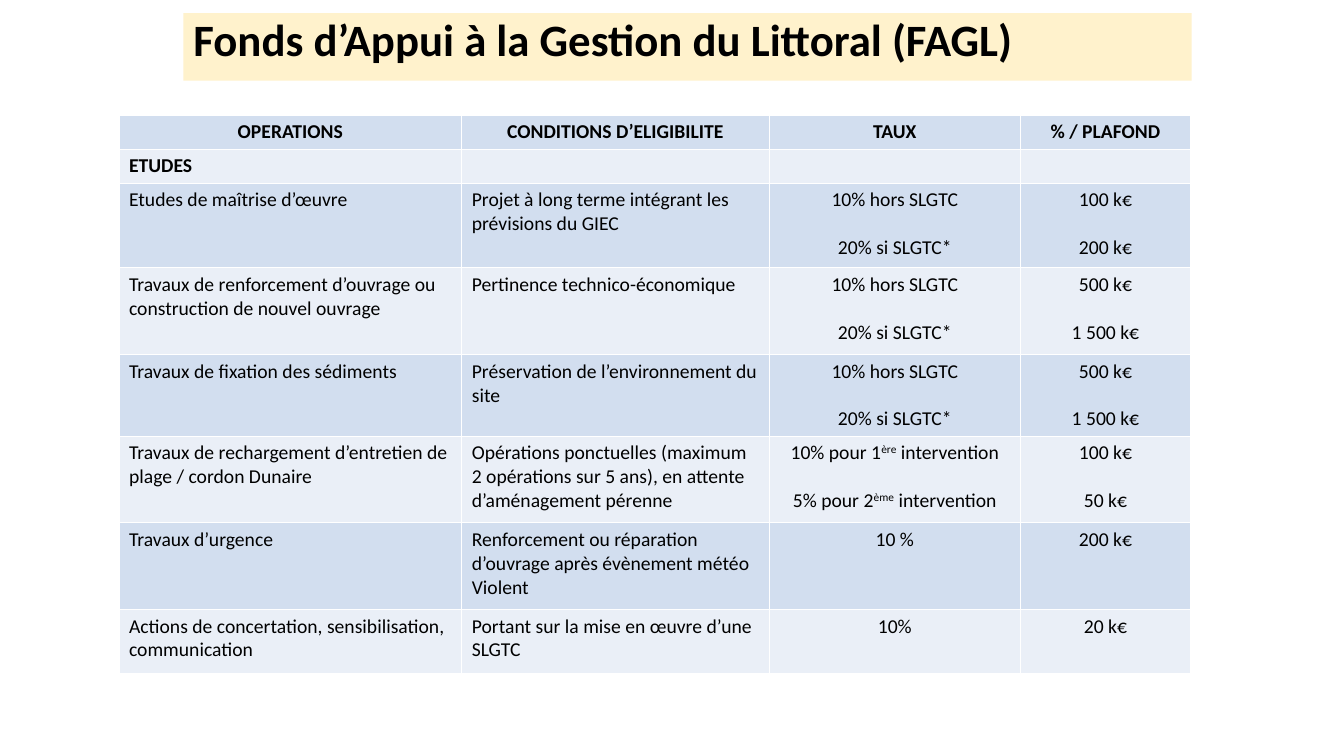
from dataclasses import dataclass

from lxml.etree import SubElement
from pptx import Presentation
from pptx.dml.color import RGBColor as RGB
from pptx.enum.shapes import MSO_SHAPE as SHAPE
from pptx.enum.text import MSO_ANCHOR as ANCHOR, PP_ALIGN as ALIGN
from pptx.oxml.ns import qn
from pptx.util import Inches, Pt


@dataclass(frozen=True)
class Theme:
    font: str = "Calibri"
    title_size: int = 32
    body_size: int = 14
    text: str = "000000"
    banner: str = "FFF2CC"
    bands: tuple = ("D2DEEF", "EAEFF7")
    border: str = "FFFFFF"
    border_width: int = 1
    rate_gap: int = 17


COLUMNS = [3.4, 3.05, 2.49, 1.69]
ROW_HEIGHTS = [0.34, 0.33, 0.84, 0.86, 0.8, 0.86, 0.86, 0.64]
HEADING_ROWS = 2
CENTERED_FROM = 2
SLGTC_RATES = "10% hors SLGTC\n20% si SLGTC*"
WORKS_CAPS = "500 k€\n1 500 k€"
ROWS = [
    ["OPERATIONS", "CONDITIONS D’ELIGIBILITE", "TAUX", "% / PLAFOND"],
    ["ETUDES", "", "", ""],
    ["Etudes de maîtrise d’œuvre",
     "Projet à long terme intégrant les prévisions du GIEC",
     SLGTC_RATES, "100 k€\n200 k€"],
    ["Travaux de renforcement d’ouvrage ou construction de nouvel ouvrage",
     "Pertinence technico-économique", SLGTC_RATES, WORKS_CAPS],
    ["Travaux de fixation des sédiments",
     "Préservation de l’environnement du site", SLGTC_RATES, WORKS_CAPS],
    ["Travaux de rechargement d’entretien de\nplage / cordon Dunaire",
     "Opérations ponctuelles (maximum 2 opérations sur 5 ans), "
     "en attente d’aménagement pérenne",
     "10% pour 1^ère^ intervention\n5% pour 2^ème^ intervention",
     "100 k€\n50 k€"],
    ["Travaux d’urgence",
     "Renforcement ou réparation d’ouvrage après évènement météo\nViolent",
     "10 %", "200 k€"],
    ["Actions de concertation, sensibilisation,\ncommunication",
     "Portant sur la mise en œuvre d’une SLGTC", "10%", "20 k€"],
]


class SlideBuilder:
    def __init__(self, slide, theme):
        self.slide = slide
        self.theme = theme

    def style_run(self, r, size, bold):
        r.font.name = self.theme.font
        r.font.size = Pt(size)
        r.font.bold = bold
        r.font.color.rgb = RGB.from_string(self.theme.text)

    def banner(self, text, x, y, w, h):
        s = self.slide.shapes.add_shape(
            SHAPE.RECTANGLE, Inches(x), Inches(y), Inches(w), Inches(h))
        s.shadow.inherit = False
        s.fill.solid()
        s.fill.fore_color.rgb = RGB.from_string(self.theme.banner)
        s.line.fill.background()
        tf = s.text_frame
        tf.word_wrap = True
        tf.vertical_anchor = ANCHOR.TOP
        tf.text = text
        p = tf.paragraphs[0]
        p.alignment = ALIGN.LEFT
        p.line_spacing = 0.9
        self.style_run(p.runs[0], self.theme.title_size, True)

    def borders(self, cell):
        tc_pr = cell._tc.get_or_add_tcPr()
        for side in ("lnL", "lnR", "lnT", "lnB"):
            ln = SubElement(tc_pr, qn(f"a:{side}"),
                            w=str(Pt(self.theme.border_width)))
            fill = SubElement(ln, qn("a:solidFill"))
            SubElement(fill, qn("a:srgbClr"), val=self.theme.border)

    def cell_text(self, cell, text, bold, centered, gap):
        size = self.theme.body_size
        tf = cell.text_frame
        for i, line in enumerate(text.split("\n")):
            p = tf.add_paragraph() if i else tf.paragraphs[0]
            p.alignment = ALIGN.CENTER if centered else ALIGN.LEFT
            if i and gap:
                p.space_before = Pt(gap)
            if not line:
                SubElement(p._p, qn("a:endParaRPr"), sz=str(size * 100))
                continue
            for j, part in enumerate(line.split("^")):
                r = p.add_run()
                r.text = part
                self.style_run(r, size, bold)
                if j % 2:
                    r._r.get_or_add_rPr().set("baseline", "30000")

    def table(self, rows, x, y, widths, heights):
        table = self.slide.shapes.add_table(
            len(rows), len(widths), Inches(x), Inches(y),
            Inches(sum(widths)), Inches(sum(heights))).table
        for column, width in zip(table.columns, widths):
            column.width = Inches(width)
        for i, (row, height) in enumerate(zip(rows, heights)):
            table.rows[i].height = Inches(height)
            for j, text in enumerate(row):
                cell = table.cell(i, j)
                numeric = j >= CENTERED_FROM
                self.borders(cell)
                cell.fill.solid()
                cell.fill.fore_color.rgb = RGB.from_string(
                    self.theme.bands[i % 2])
                self.cell_text(cell, text, bold=i < HEADING_ROWS,
                               centered=i == 0 or numeric,
                               gap=self.theme.rate_gap if numeric else 0)


def main():
    prs = Presentation()
    prs.slide_width = Inches(13.33)
    prs.slide_height = Inches(7.5)
    builder = SlideBuilder(prs.slides.add_slide(prs.slide_layouts[6]), Theme())
    builder.banner("Fonds d’Appui à la Gestion du Littoral (FAGL)",
                   1.82, 0.13, 10, 0.67)
    builder.table(ROWS, 1.18, 1.14, COLUMNS, ROW_HEIGHTS)
    prs.save("out.pptx")


if __name__ == "__main__":
    main()
